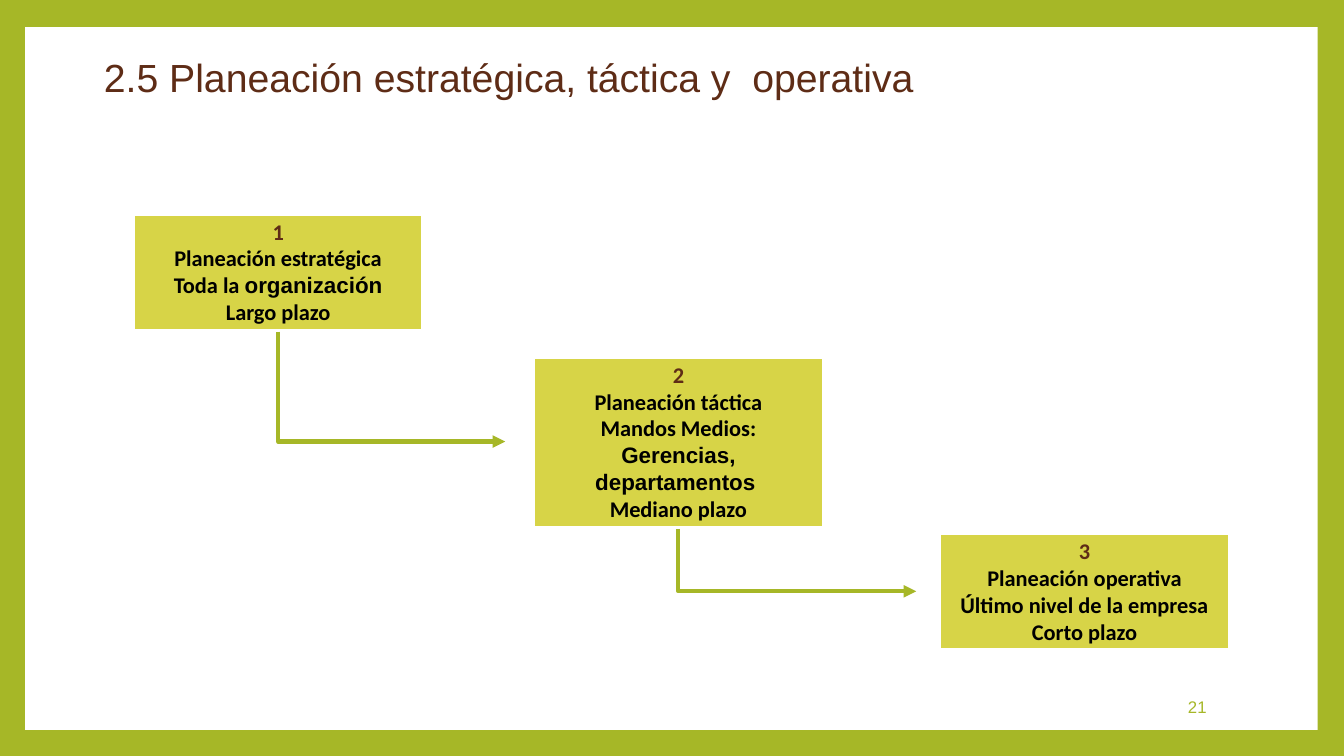
from lxml import etree
from pptx import Presentation
from pptx.dml.color import RGBColor
from pptx.enum import shapes, text
from pptx.oxml.ns import qn
from pptx.util import Pt

GREEN = RGBColor(0xA6, 0xB7, 0x27)
LIME = RGBColor(0xD7, 0xD4, 0x47)
BROWN = RGBColor(0x5E, 0x2C, 0x16)
BLACK = RGBColor(0, 0, 0)
WHITE = RGBColor(0xFF, 0xFF, 0xFF)

BOX_WIDTH = 208.8

# Left, top, height, paragraphs as (text, font) spans
LEVELS = [
    (94.3, 151.9, 85, [
        [("1", "Calibri")],
        [("Planeación estratégica", "Calibri")],
        [("Toda la ", "Calibri"), ("organización", "Arial")],
        [("Largo plazo", "Calibri")]]),
    (380.2, 254.2, 123.6, [
        [("2", "Calibri")],
        [("Planeación táctica", "Calibri")],
        [("Mandos Medios:", "Calibri")],
        [("Gerencias, departamentos ", "Arial")],
        [("Mediano plazo", "Calibri")]]),
    (670.3, 380.2, 85, [
        [("3", "Calibri")],
        [("Planeación operativa", "Calibri")],
        [("Último nivel de la empresa", "Calibri")],
        [("Corto plazo", "Calibri")]]),
]
ARROW_ENDS = [(360.9, 315.4), (654.5, 422.4)]


def style(font, name, size, color, bold=False):
    font.name, font.size, font.bold = name, Pt(size), bold
    font.color.rgb = color


deck = Presentation()
deck.slide_width, deck.slide_height = Pt(960), Pt(540)
page = deck.slides.add_slide(deck.slide_layouts[5])

# Green frame around a white panel
page.background.fill.solid()
page.background.fill.fore_color.rgb = GREEN
panel = page.shapes.add_shape(
    shapes.MSO_SHAPE.RECTANGLE, Pt(18), Pt(19.3), Pt(923.2), Pt(502))
panel.shadow.inherit = False
panel.fill.solid()
panel.fill.fore_color.rgb = WHITE
panel.line.fill.background()

# Title, brought in front of the panel
title = page.shapes.title
panel._element.addnext(title._element)
title.left, title.top, title.width, title.height = Pt(67), Pt(34.6), Pt(707), Pt(41)
frame = title.text_frame
frame.text = "2.5 Planeación estratégica, táctica y  operativa"
frame.vertical_anchor = text.MSO_ANCHOR.TOP
frame.auto_size = text.MSO_AUTO_SIZE.NONE
frame.paragraphs[0].alignment = text.PP_ALIGN.LEFT
style(frame.paragraphs[0].runs[0].font, "Arial", 28, BROWN)

# Planning levels
for left, top, height, lines in LEVELS:
    box = page.shapes.add_shape(
        shapes.MSO_SHAPE.RECTANGLE, Pt(left), Pt(top), Pt(BOX_WIDTH), Pt(height))
    box.shadow.inherit = False
    box.fill.solid()
    box.fill.fore_color.rgb = LIME
    box.line.color.rgb = WHITE
    box.line.width = Pt(4.25)
    frame = box.text_frame
    frame.word_wrap = True
    frame.vertical_anchor = text.MSO_ANCHOR.TOP
    for index, spans in enumerate(lines):
        para = frame.paragraphs[0] if index == 0 else frame.add_paragraph()
        para.alignment = text.PP_ALIGN.CENTER
        for words, font_name in spans:
            span = para.add_run()
            span.text = words
            style(span.font, font_name, 16, BROWN if index == 0 else BLACK, True)

# Bent arrows: down from a box, then right (a flipped elbow turned 270 degrees)
for (left, top, height, _), (end_x, end_y) in zip(LEVELS, ARROW_ENDS):
    start_x, start_y = left + BOX_WIDTH / 2, top + height
    center_x, center_y = (start_x + end_x) / 2, (start_y + end_y) / 2
    half_run, half_drop = (end_x - start_x) / 2, (end_y - start_y) / 2
    arrow = page.shapes.add_connector(
        shapes.MSO_CONNECTOR.ELBOW,
        Pt(center_x + half_drop), Pt(center_y - half_run),
        Pt(center_x - half_drop), Pt(center_y + half_run))
    arrow.line.color.rgb = GREEN
    arrow.line.width = Pt(3)
    properties = arrow._element.spPr
    properties.find(qn("a:xfrm")).set("rot", "16200000")
    properties.find(qn("a:prstGeom")).set("prst", "bentConnector2")
    etree.SubElement(properties.find(qn("a:ln")), qn("a:tailEnd"), type="triangle")
    etree.SubElement(properties, qn("a:effectLst"))

# Page number
number = page.shapes.add_textbox(Pt(734.4), Pt(490.3), Pt(134.6), Pt(28.8))
frame = number.text_frame
frame.word_wrap = True
frame.text = "21"
frame.vertical_anchor = text.MSO_ANCHOR.MIDDLE
frame.paragraphs[0].alignment = text.PP_ALIGN.RIGHT
style(frame.paragraphs[0].runs[0].font, "Arial", 12, GREEN)

deck.save("out.pptx")
